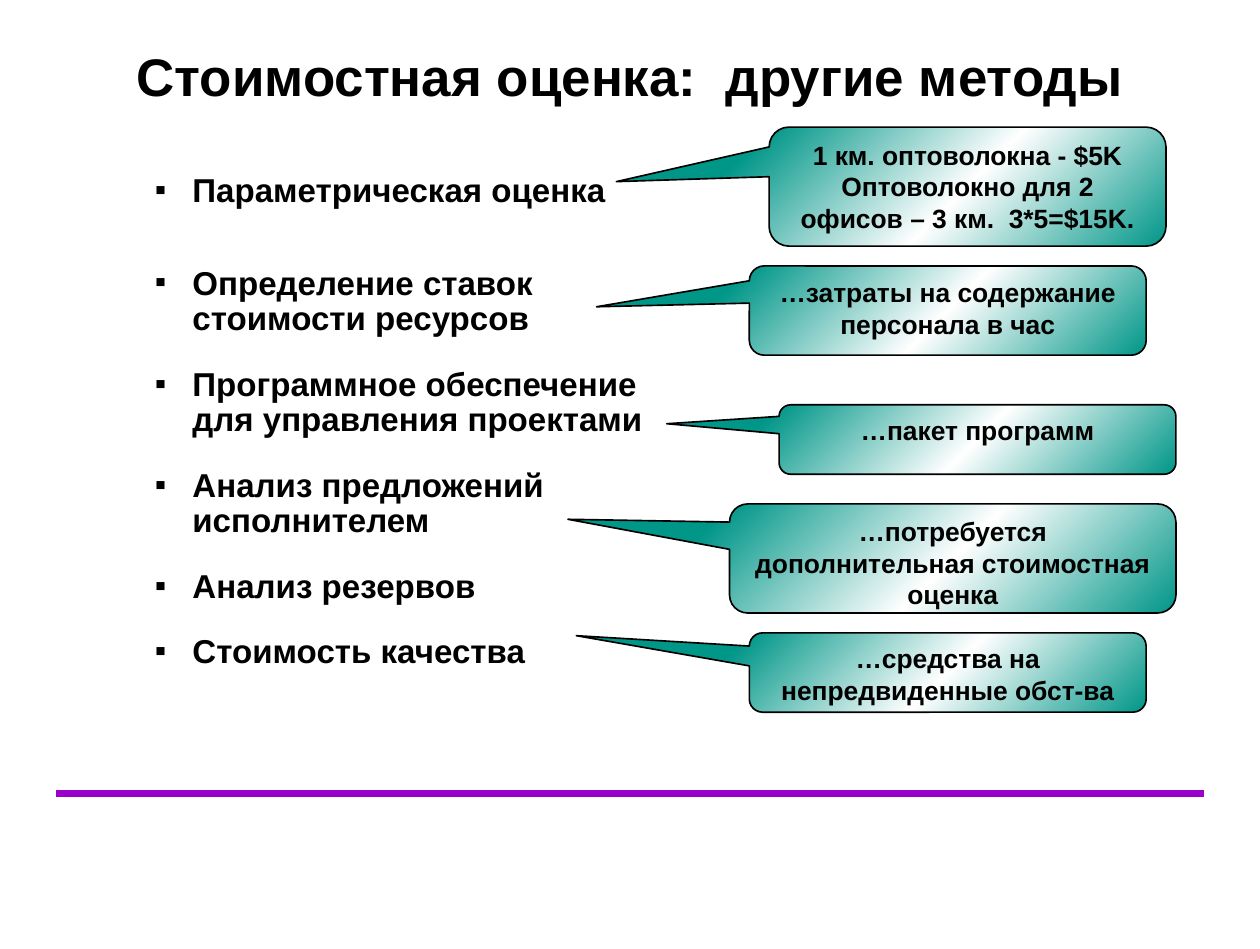
from copy import deepcopy

from lxml.etree import SubElement
from pptx import Presentation
from pptx.dml.color import RGBColor
from pptx.enum.shapes import MSO_CONNECTOR, MSO_SHAPE
from pptx.enum.text import MSO_ANCHOR, PP_ALIGN
from pptx.oxml.ns import qn
from pptx.util import Inches, Pt

BLACK = RGBColor(0x00, 0x00, 0x00)
WHITE = RGBColor(0xFF, 0xFF, 0xFF)
TEAL = RGBColor(0x00, 0x96, 0x88)
PURPLE = RGBColor(0x99, 0x00, 0xCC)

WIDTH, HEIGHT = Inches(10.59), Inches(7.98)
UNIT = WIDTH / 127  # grid step of the callouts

METHODS = [
    "Параметрическая оценка",
    "Определение ставок стоимости ресурсов",
    "Программное обеспечение для управления проектами",
    "Анализ предложений исполнителем",
    "Анализ резервов",
    "Стоимость качества",
]
# column, row, columns wide, rows high, tail tip (x, y), text
EXAMPLES = [
    (4, 0, 40, 12, (-0.885, -0.042),
     "1 км. оптоволокна - $5K\nОптоволокно для 2 офисов – 3 км.  3*5=$15K."),
    (2, 14, 40, 9, (-0.885, -0.042), "…затраты на содержание персонала в час"),
    (5, 28, 40, 7, (-0.783, -0.227), "…пакет программ"),
    (0, 38, 45, 11, (-0.862, -0.359),
     "…потребуется дополнительная стоимостная оценка"),
    (2, 51, 40, 8, (-0.936, -0.464), "…средства на непредвиденные обст-ва"),
]


def share(x, y, width, height):
    """Turn shares of the slide's size into a box."""
    return (round(x * WIDTH), round(y * HEIGHT),
            round(width * WIDTH), round(height * HEIGHT))


def style_text(frame, size, align):
    frame.word_wrap = True
    frame.vertical_anchor = MSO_ANCHOR.TOP
    for paragraph in frame.paragraphs:
        paragraph.alignment = align
        font = paragraph.font
        font.name, font.size, font.bold = "Arial", Pt(size), True
        font.color.rgb = BLACK


def add_title(slide, box):
    title = slide.shapes.title
    title.left, title.top, title.width, title.height = box
    title.text_frame.text = "Стоимостная оценка:  другие методы"
    style_text(title.text_frame, 32, PP_ALIGN.CENTER)


def add_methods(slide, box):
    frame = slide.shapes.add_textbox(*box).text_frame
    frame.text = "\n".join(METHODS)
    for number, paragraph in enumerate(frame.paragraphs):
        paragraph.line_spacing = 0.9
        if number:
            paragraph.space_before = Pt(34.5 if number == 1 else 18)
        properties = paragraph._p.get_or_add_pPr()
        properties.set("marL", str(Inches(0.81)))
        properties.set("indent", str(-Inches(0.31)))
        SubElement(properties, qn("a:buSzPct")).set("val", "50000")
        SubElement(properties, qn("a:buFont")).set("typeface", "Arial")
        SubElement(properties, qn("a:buChar")).set("char", "■")
    style_text(frame, 20, PP_ALIGN.LEFT)


def fill_with_sheen(shape):
    """Fill with a diagonal gradient: teal, white, teal."""
    shape.fill.gradient()
    shape.fill.gradient_angle = 315
    stop_list = shape._element.xpath(".//a:gsLst")[0]
    stop_list.insert(1, deepcopy(stop_list[0]))
    for stop, position, color in zip(shape.fill.gradient_stops,
                                     (0, 0.5, 1), (TEAL, WHITE, TEAL)):
        stop.position = position
        stop.color.rgb = color


def add_examples(slide, box):
    left, top = box[:2]
    for column, row, columns, rows, tip, text in EXAMPLES:
        callout = slide.shapes.add_shape(
            MSO_SHAPE.ROUNDED_RECTANGULAR_CALLOUT,
            round(left + column * UNIT), round(top + row * UNIT),
            round(columns * UNIT), round(rows * UNIT))
        callout.shadow.inherit = False
        callout.adjustments[0], callout.adjustments[1] = tip
        fill_with_sheen(callout)
        callout.line.color.rgb = BLACK
        callout.line.width = Pt(1)
        frame = callout.text_frame
        frame.text = text
        frame.margin_left = frame.margin_right = Inches(0.11)
        style_text(frame, 16, PP_ALIGN.CENTER)


def add_footer_rule(slide, box):
    left, top, width, _ = box
    rule = slide.shapes.add_connector(
        MSO_CONNECTOR.STRAIGHT, left, top, left + width, top)
    rule.line.color.rgb = PURPLE
    rule.line.width = Pt(4)
    SubElement(rule._element.spPr, qn("a:effectLst"))


def main():
    deck = Presentation()
    deck.slide_width, deck.slide_height = WIDTH, HEIGHT
    slide = deck.slides.add_slide(deck.slide_layouts[5])
    add_footer_rule(slide, share(0.0444, 0.836, 0.911, 0))
    add_title(slide, share(0.05, 0.04, 0.9, 0.115))
    add_methods(slide, share(0.067, 0.177, 0.472, 0.46))
    add_examples(slide, share(0.579, 0.134, 0.354, 0.617))
    deck.save("out.pptx")


if __name__ == "__main__":
    main()
